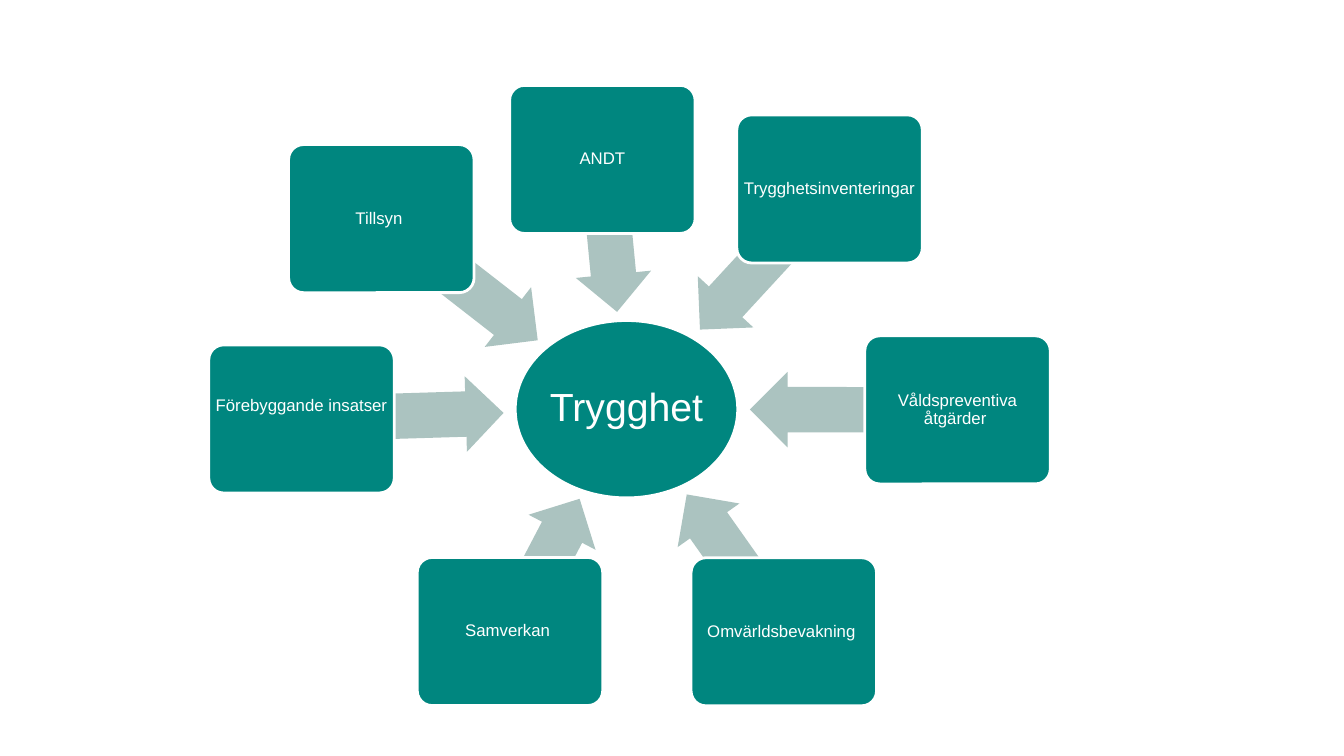
import math
import pptx
import pptx.util
import pptx.dml.color
import pptx.enum.shapes
import pptx.enum.text

Pt = pptx.util.Pt
SHAPES = pptx.enum.shapes.MSO_SHAPE
COLOURS = {"teal": "00867F", "mist": "ABC3C0", "white": "FFFFFF"}
HUB = (447.5, 292.3, 159, 126.7)
CARD_SIZE = (132.5, 105.8)
ARROW_HEIGHT = 54
ARROW_REACH = 0.945
TOPICS = [
    ("Samverkan ", 364.3, 451.1, 0),
    ("Förebyggande insatser ", 215.4, 299.3, 18),
    ("Tillsyn ", 272.4, 156.2, 0),
    ("ANDT", 430.3, 113.9, 0),
    ("Trygghetsinventeringar ", 592.6, 135, 0),
    ("Våldspreventiva åtgärder ", 684, 292.8, 0),
    ("Omvärldsbevakning ", 559.9, 451.3, 0),
]


def rgb(name):
    return pptx.dml.color.RGBColor.from_string(COLOURS[name])


def set_all(target, values):
    for name, value in values.items():
        setattr(target, name, value)


def add_centred(page, kind, box, fill):
    x, y, width, height = box
    shape = page.shapes.add_shape(
        kind, Pt(x - width / 2), Pt(y - height / 2), Pt(width), Pt(height))
    shape.shadow.inherit = False
    shape.fill.solid()
    shape.fill.fore_color.rgb = rgb(fill)
    return shape


def add_label(page, kind, box, text, size, inset, lift=0):
    shape = add_centred(page, kind, box, "teal")
    shape.line.color.rgb = rgb("white")
    shape.line.width = Pt(2)
    frame = shape.text_frame
    set_all(frame, {
        "word_wrap": True,
        "vertical_anchor": pptx.enum.text.MSO_ANCHOR.MIDDLE,
        "margin_left": Pt(inset), "margin_right": Pt(inset),
        "margin_top": Pt(inset), "margin_bottom": Pt(inset + lift),
    })
    para = frame.paragraphs[0]
    set_all(para, {"alignment": pptx.enum.text.PP_ALIGN.CENTER, "line_spacing": 0.9})
    span = para.add_run()
    span.text = text
    set_all(span.font, {"name": "Arial", "size": Pt(size)})
    span.font.color.rgb = rgb("white")
    return shape


def add_arrow(page, hub, x, y):
    hub_x, hub_y, hub_width, hub_height = hub
    angle = math.atan2(y - hub_y, x - hub_x)
    cos, sin = math.cos(angle), math.sin(angle)
    hub_edge = 1 / math.hypot(2 * cos / hub_width, 2 * sin / hub_height)
    length = ARROW_REACH * (math.hypot(x - hub_x, y - hub_y) - hub_edge)
    box = (x - cos * length / 2, y - sin * length / 2, length, ARROW_HEIGHT)
    arrow = add_centred(page, SHAPES.LEFT_ARROW, box, "mist")
    arrow.line.fill.background()
    arrow.adjustments[0] = 0.6
    arrow.adjustments[1] = 0.5
    arrow.rotation = math.degrees(angle) % 360


def add_topic(page, hub, text, x, y, lift):
    add_arrow(page, hub, x, y)
    box = (x, y, *CARD_SIZE)
    card = add_label(page, SHAPES.ROUNDED_RECTANGLE, box, text, 12, 1, lift)
    card.adjustments[0] = 0.1


def build_radial_slide(deck, hub):
    page = deck.slides.add_slide(deck.slide_layouts[6])
    add_label(page, SHAPES.OVAL, hub, "Trygghet ", 28, 0)
    for topic in TOPICS:
        add_topic(page, hub, *topic)


def main():
    deck = pptx.Presentation()
    set_all(deck, {"slide_width": Pt(960), "slide_height": Pt(540)})
    build_radial_slide(deck, HUB)
    deck.save("out.pptx")


if __name__ == "__main__":
    main()
